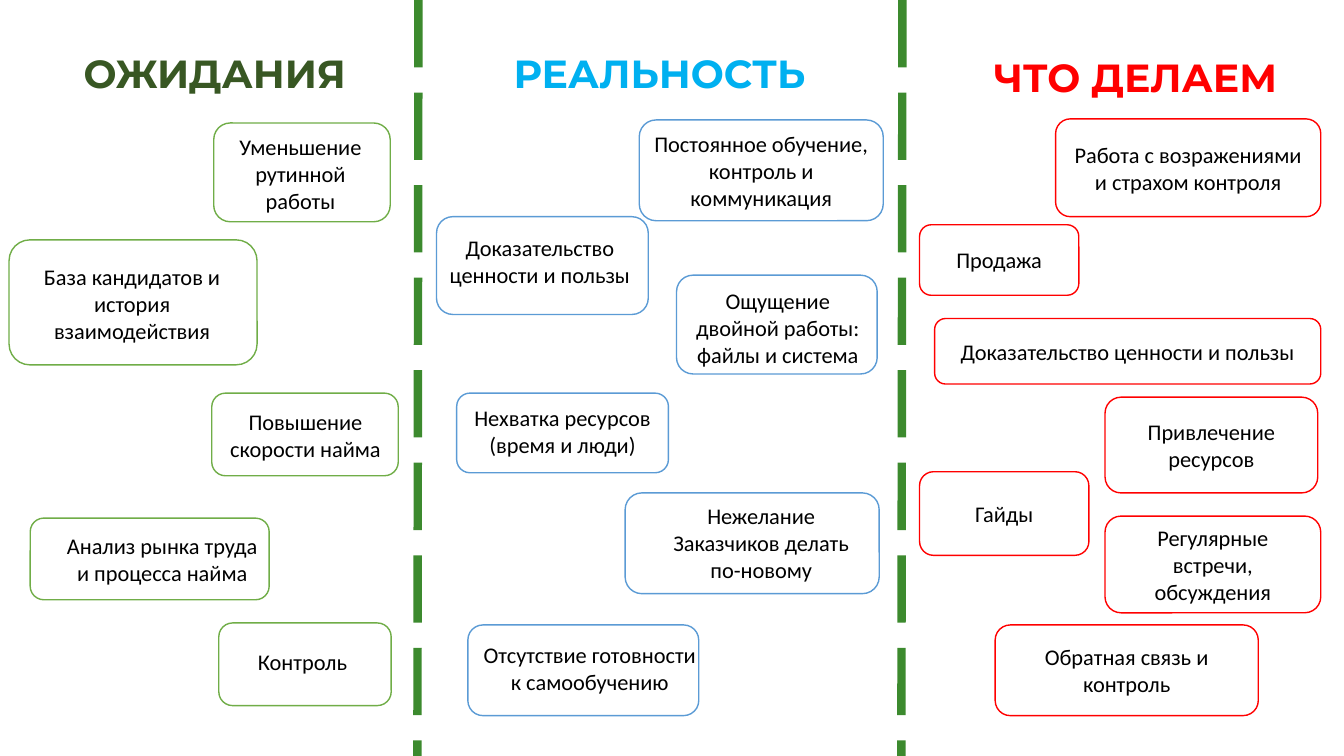
"""Build a three-column slide: expectations, reality and actions."""
from dataclasses import dataclass
from typing import Optional

from lxml import etree
from pptx import Presentation
from pptx.dml.color import RGBColor
from pptx.enum.dml import MSO_LINE
from pptx.enum.shapes import MSO_CONNECTOR, MSO_SHAPE
from pptx.enum.text import MSO_ANCHOR, MSO_AUTO_SIZE, PP_ALIGN
from pptx.oxml.ns import qn
from pptx.util import Inches, Pt

ROUNDED = MSO_SHAPE.ROUNDED_RECTANGLE
STRAIGHT = MSO_CONNECTOR.STRAIGHT
LONG_DASH = MSO_LINE.LONG_DASH
CENTER = PP_ALIGN.CENTER
TOP, MIDDLE = MSO_ANCHOR.TOP, MSO_ANCHOR.MIDDLE
NO_FIT, GROW = MSO_AUTO_SIZE.NONE, MSO_AUTO_SIZE.SHAPE_TO_FIT_TEXT

ROWS = 75
COMPARISON_LAYOUT = 4
BLUE, RED, GREEN = "5B9BD5", "FF0000", "70AD47"
BLACK, WHITE, DIVIDER = "000000", "FFFFFF", "3C8A2E"


@dataclass(frozen=True)
class Area:
    """A rectangle in grid columns and rows."""
    col: float
    row: float
    cols: float
    rows: float


@dataclass(frozen=True)
class Heading:
    """A column heading held by a placeholder."""
    idx: int
    text: str
    area: Area
    color: str


@dataclass(frozen=True)
class Note:
    """A rounded box with its text inside or in a label on top."""
    text: str
    color: str
    box: Area
    label: Optional[Area] = None
    radius: float = 0.1667


HEADINGS = [
    Heading(0, "ОЖИДАНИЯ", Area(3.3, 4.4, 36, 5.7), "385723"),
    Heading(1, "РЕАЛЬНОСТЬ", Area(47.4, 4.4, 36, 5.7), "00B0F0"),
    Heading(3, "ЧТО ДЕЛАЕМ", Area(94.6, 4.8, 36, 5.7), RED),
]

DIVIDERS = [41.5, 89.5]

NOTES = [
    Note("Ощущение двойной работы: файлы и система", BLUE,
         Area(67.1, 27.3, 19.9, 9.8), Area(67, 28, 20.3, 9.1)),
    Note("Доказательство ценности и пользы", BLUE,
         Area(43.3, 21.5, 21, 9.7), Area(43.2, 22.7, 20.7, 9.1)),
    Note("Нехватка ресурсов (время и люди)", BLUE,
         Area(45.3, 39, 21, 7.9), Area(45.3, 39.6, 21, 6.4)),
    Note("Нежелание Заказчиков делать по-новому", BLUE,
         Area(62, 48.9, 25.2, 10), Area(64.8, 49.3, 21.4, 9.1)),
    Note("Отсутствие готовности к самообучению", BLUE,
         Area(46.4, 62, 22.9, 9), Area(46.8, 63.1, 23.4, 6.4)),
    Note("Постоянное обучение, контроль и коммуникация", BLUE,
         Area(63.4, 11.9, 24.2, 10)),
    Note("Работа с возражениями и страхом контроля", RED,
         Area(104.7, 11.8, 26.3, 9.7), radius=0.15),
    Note("Доказательство ценности и пользы", RED, Area(92.7, 31.6, 38.3, 6.5)),
    Note("Привлечение ресурсов", RED, Area(109.6, 39.4, 21.1, 9.5)),
    Note("Регулярные встречи, обсуждения", RED, Area(109.6, 51.2, 21.4, 9.6)),
    Note("Продажа", RED, Area(91.2, 22.3, 15.8, 7)),
    Note("Обратная связь и контроль", RED, Area(98.7, 62, 26.1, 9)),
    Note("Гайды", RED, Area(91.2, 46.8, 16.8, 8.3)),
    Note("Уменьшение рутинной работы", GREEN,
         Area(21.2, 12.2, 17.5, 9.8), Area(21.2, 12.7, 17.2, 9.1)),
    Note("База кандидатов и история взаимодействия", GREEN,
         Area(0.9, 23.8, 24.6, 12.4), Area(2.2, 25.6, 21.8, 9.1)),
    Note("Анализ рынка труда и процесса найма", GREEN,
         Area(3, 51.4, 23.7, 8.1), Area(5.1, 52.3, 22, 6.4)),
    Note("Контроль", GREEN,
         Area(21.7, 61.8, 17.1, 8.2), Area(21.4, 63.8, 17.2, 3.7)),
    Note("Повышение скорости найма", GREEN,
         Area(21, 39, 18.5, 8.2), Area(21.7, 40, 17.2, 6.4)),
]

prs = Presentation()
prs.slide_width, prs.slide_height = Inches(13.33), Inches(7.5)


def rgb(value: str) -> RGBColor:
    """Turn a hex string into a colour."""
    return RGBColor.from_string(value)


def grid(units: float) -> int:
    """Turn grid units into a length."""
    return round(units * prs.slide_height / ROWS)


def bounds(area: Area) -> tuple:
    """Return left, top, width and height of an area."""
    return grid(area.col), grid(area.row), grid(area.cols), grid(area.rows)


def write(sp, text: str, size: int, font: str, color: str, anchor, fit,
          bold: bool = False) -> None:
    """Put one centred, wrapped paragraph into a shape."""
    tf = sp.text_frame
    tf.word_wrap, tf.auto_size, tf.vertical_anchor = True, fit, anchor
    p = tf.paragraphs[0]
    p.text, p.alignment, p.space_before = text, CENTER, Pt(0)
    p.font.size, p.font.name, p.font.bold = Pt(size), font, bold
    p.font.color.rgb = rgb(color)


def add_heading(s, heading: Heading) -> None:
    """Move and fill the placeholder of a heading."""
    sp = s.placeholders[heading.idx]
    sp.left, sp.top, sp.width, sp.height = bounds(heading.area)
    write(sp, heading.text, 28, "Montserrat", heading.color, TOP, NO_FIT, True)


def add_divider(s, col: float) -> None:
    """Draw a dashed divider over the full slide height."""
    line = s.shapes.add_connector(STRAIGHT, grid(col), 0,
                                  grid(col - 0.1), grid(ROWS))
    line.line.color.rgb = rgb(DIVIDER)
    line.line.width = Pt(6)
    line.line.dash_style = LONG_DASH
    etree.SubElement(line._element.spPr, qn("a:effectLst"))


def add_note(s, note: Note) -> None:
    """Draw a rounded box and its text."""
    sp = s.shapes.add_shape(ROUNDED, *bounds(note.box))
    sp.adjustments[0] = note.radius
    sp.shadow.inherit = False
    sp.fill.solid()
    sp.fill.fore_color.rgb = rgb(WHITE)
    sp.line.color.rgb = rgb(note.color)
    sp.line.width = Pt(1)
    anchor, fit = MIDDLE, NO_FIT
    if note.label:
        sp = s.shapes.add_textbox(*bounds(note.label))
        anchor, fit = TOP, GROW
    write(sp, note.text, 16, "Calibri", BLACK, anchor, fit)


def main() -> None:
    """Build and save the slide."""
    s = prs.slides.add_slide(prs.slide_layouts[COMPARISON_LAYOUT])
    for heading in HEADINGS:
        add_heading(s, heading)
    for sp in list(s.placeholders):
        if not sp.text_frame.text:
            sp._element.getparent().remove(sp._element)
    for col in DIVIDERS:
        add_divider(s, col)
    for note in NOTES:
        add_note(s, note)
    prs.save("out.pptx")


if __name__ == "__main__":
    main()
